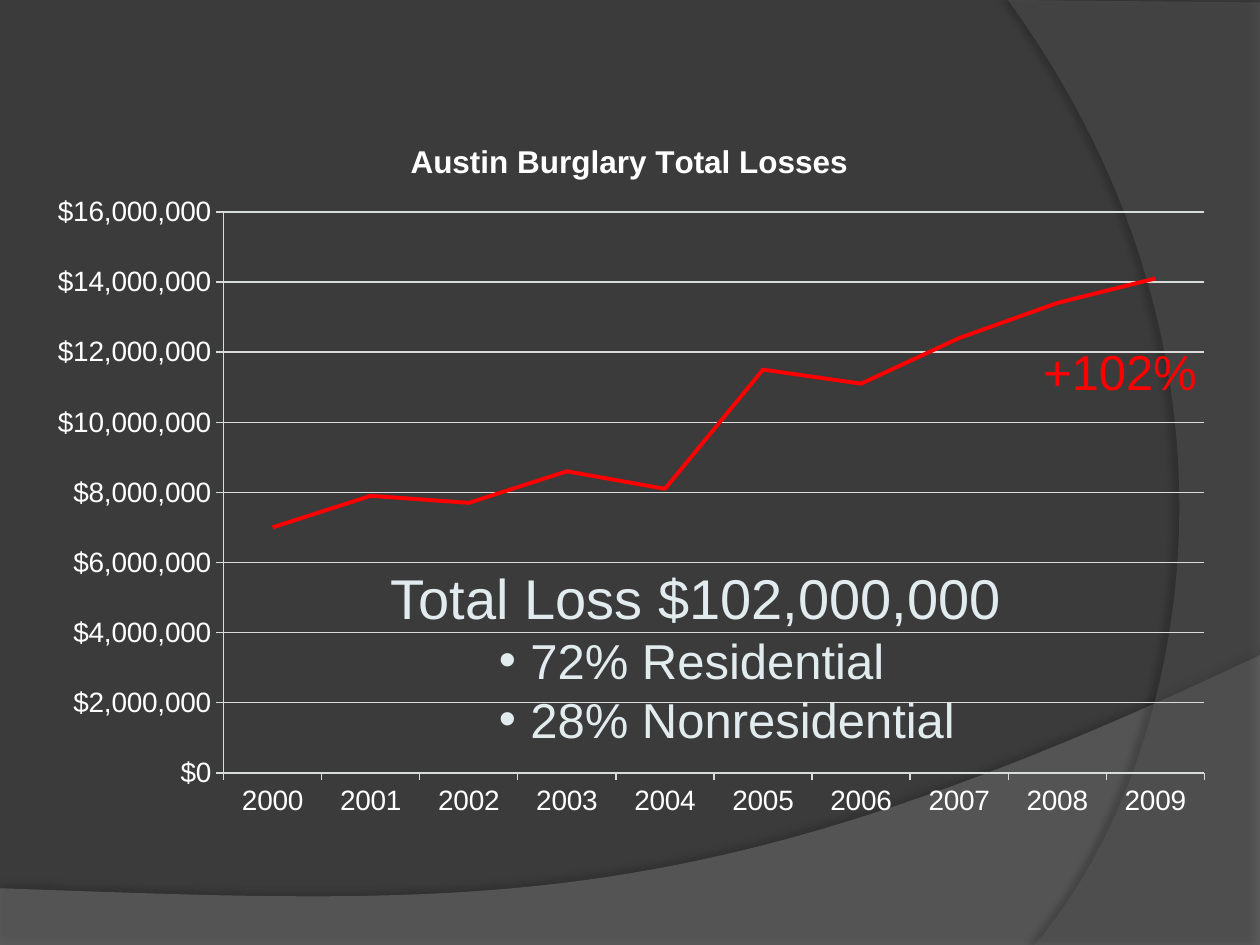
import dataclasses

import lxml.etree
import pptx
import pptx.chart.data
import pptx.dml.color
import pptx.enum.chart
import pptx.enum.text
import pptx.oxml
import pptx.oxml.ns
import pptx.util

COLUMNS, ROWS = 100, 75
CELL = pptx.util.Inches(0.1)


@dataclasses.dataclass(frozen=True)
class Theme:
    font: str = "Arial"
    background: str = "3B3B3B"
    lower_wave: str = "7F7F7F"
    side_wave: str = "5E5E5E"
    chart_text: str = "FFFFFF"
    grid: str = "D9DCDC"
    accent: str = "FF0000"
    body: str = "E2ECEF"
    axis_size: int = 16
    title_size: int = 18
    detail_size: int = 28
    heading_size: int = 32


THEME = Theme()


def color(value):
    return pptx.dml.color.RGBColor.from_string(value)


def grid(*cells):
    return [round(cell * CELL) for cell in cells]


def style_font(font, size, value, bold=False):
    font.name = THEME.font
    font.size = pptx.util.Pt(size)
    font.bold = bold
    font.color.rgb = color(value)


def style_line(line, value, width):
    line.color.rgb = color(value)
    line.width = pptx.util.Pt(width)


def add_child(parent, tag, **attributes):
    child = lxml.etree.SubElement(parent, pptx.oxml.ns.qn(tag))
    for name, value in attributes.items():
        child.set(name, str(value))
    return child


def curve(start, first, second, end, steps=48):
    points = []
    for step in range(1, steps + 1):
        t = step / steps
        weights = ((1 - t) ** 3, 3 * t * (1 - t) ** 2, 3 * t * t * (1 - t), t ** 3)
        points.append(tuple(
            sum(weight * value for weight, value in zip(weights, axis))
            for axis in zip(start, first, second, end)
        ))
    return points


def add_wave(slide, points, fill, opacity, shadow_opacity, distance, direction):
    vertices = [grid(*point) for point in points]
    builder = slide.shapes.build_freeform(*vertices[0], scale=1.0)
    builder.add_line_segments(vertices[1:], close=True)
    shape = builder.convert_to_shape()
    shape.shadow.inherit = False
    shape.fill.solid()
    shape.fill.fore_color.rgb = color(fill)
    shape.line.fill.background()
    properties = shape._element.spPr
    fill_color = properties.find(".//" + pptx.oxml.ns.qn("a:srgbClr"))
    add_child(fill_color, "a:alpha", val=opacity * 1000)
    effects = properties.find(pptx.oxml.ns.qn("a:effectLst"))
    shadow = add_child(
        effects, "a:outerShdw", blurRad=pptx.util.Pt(4), dist=pptx.util.Pt(distance),
        dir=direction * 60000, algn="ctr", rotWithShape=0,
    )
    shadow_color = add_child(shadow, "a:srgbClr", val="000000")
    add_child(shadow_color, "a:alpha", val=shadow_opacity * 1000)


def place_plot(chart, **shares):
    plot_area = chart._chartSpace.chart.plotArea
    layout = plot_area.find(pptx.oxml.ns.qn("c:layout"))
    if layout is None:
        layout = pptx.oxml.parse_xml(f"<c:layout {pptx.oxml.ns.nsdecls('c')}/>")
        plot_area.insert(0, layout)
    manual = add_child(layout, "c:manualLayout")
    add_child(manual, "c:layoutTarget", val="inner")
    for name in ("xMode", "yMode"):
        add_child(manual, f"c:{name}", val="edge")
    for name, share in shares.items():
        add_child(manual, f"c:{name}", val=share)


def add_loss_chart(slide, title, years, losses):
    chart_data = pptx.chart.data.CategoryChartData()
    chart_data.categories = years
    chart_data.add_series("Series 1", losses)
    chart = slide.shapes.add_chart(
        pptx.enum.chart.XL_CHART_TYPE.LINE, *grid(2.6, 9.1, 94.7, 56.8), chart_data
    ).chart
    style_font(chart.font, THEME.axis_size, THEME.chart_text)
    chart.has_legend = False
    chart.has_title = True
    chart.chart_title.text_frame.text = title
    title_run = chart.chart_title.text_frame.paragraphs[0].runs[0]
    style_font(title_run.font, THEME.title_size, THEME.chart_text, bold=True)
    place_plot(chart, x=0.16, y=0.136, w=0.822, h=0.784)
    for axis in (chart.category_axis, chart.value_axis):
        axis.major_tick_mark = pptx.enum.chart.XL_TICK_MARK.OUTSIDE
        style_font(axis.tick_labels.font, THEME.axis_size, THEME.chart_text)
        style_line(axis.format.line, THEME.grid, 0.75)
    value_axis = chart.value_axis
    value_axis.minimum_scale, value_axis.maximum_scale = 0, 16_000_000
    value_axis.major_unit = 2_000_000
    value_axis.tick_labels.number_format = '"$"#,##0'
    value_axis.tick_labels.number_format_is_linked = False
    style_line(value_axis.major_gridlines.format.line, THEME.grid, 0.75)
    chart.plots[0].vary_by_categories = False
    series = chart.plots[0].series[0]
    series.smooth = False
    style_line(series.format.line, THEME.accent, 2.25)


def add_callout(slide, text):
    shape = slide.shapes.add_textbox(*grid(81.8, 26.6, 14.4, 5.7))
    shape.text_frame.word_wrap = False
    shape.text_frame.text = text
    run = shape.text_frame.paragraphs[0].runs[0]
    style_font(run.font, THEME.detail_size, THEME.accent)


def format_bullet(paragraph, margin, hanging):
    properties = paragraph._p.get_or_add_pPr()
    for child in list(properties.findall(pptx.oxml.ns.qn("a:buNone"))):
        properties.remove(child)
    properties.set("marL", str(grid(margin)[0]))
    properties.set("indent", str(-grid(hanging)[0]))
    if hanging:
        add_child(properties, "a:buFont", typeface=THEME.font)
        add_child(properties, "a:buChar", char="•")
    else:
        add_child(properties, "a:buNone")


def fill_summary(slide, heading, details):
    shape = slide.placeholders[1]
    shape.left, shape.top, shape.width, shape.height = grid(30, 44.2, 50.8, 15.8)
    frame = shape.text_frame
    frame.text = "\n".join([heading, *details])
    frame.word_wrap = True
    frame.auto_size = pptx.enum.text.MSO_AUTO_SIZE.NONE
    for index, paragraph in enumerate(frame.paragraphs):
        paragraph.space_before = paragraph.space_after = pptx.util.Pt(0)
        paragraph.line_spacing = 1.0
        size = THEME.detail_size if index else THEME.heading_size
        style_font(paragraph.runs[0].font, size, THEME.body)
        format_bullet(paragraph, *((11.1, 2.5) if index else (0, 0)))
    slide.shapes._spTree.append(shape._element)


def main():
    presentation = pptx.Presentation()
    presentation.slide_width, presentation.slide_height = grid(COLUMNS, ROWS)
    slide = presentation.slides.add_slide(presentation.slide_layouts[1])
    title = slide.shapes.title._element
    title.getparent().remove(title)
    slide.background.fill.solid()
    slide.background.fill.fore_color.rgb = color(THEME.background)

    lower_edge = curve((COLUMNS, 52), (55.9, 72.9), (39.1, 71.9), (0, 70.5))
    side_edge = curve((82.1, ROWS), (93.5, 61.9), (101.8, 30), (80, 0))
    add_wave(slide, [(0, ROWS), (COLUMNS, ROWS), (COLUMNS, 52), *lower_edge],
             THEME.lower_wave, 45, 35, 3.5, 270)
    add_wave(slide, [(COLUMNS, 0.2), (COLUMNS, ROWS), (82.1, ROWS), *side_edge],
             THEME.side_wave, 40, 45, 4, 180)

    millions = (7, 7.9, 7.7, 8.6, 8.1, 11.5, 11.1, 12.4, 13.4, 14.1)
    add_loss_chart(slide, "Austin Burglary Total Losses",
                   [str(year) for year in range(2000, 2010)],
                   [round(value * 1_000_000) for value in millions])
    add_callout(slide, "+102%")
    fill_summary(slide, "Total Loss $102,000,000",
                 ["72% Residential", "28% Nonresidential"])
    presentation.save("out.pptx")


if __name__ == "__main__":
    main()
